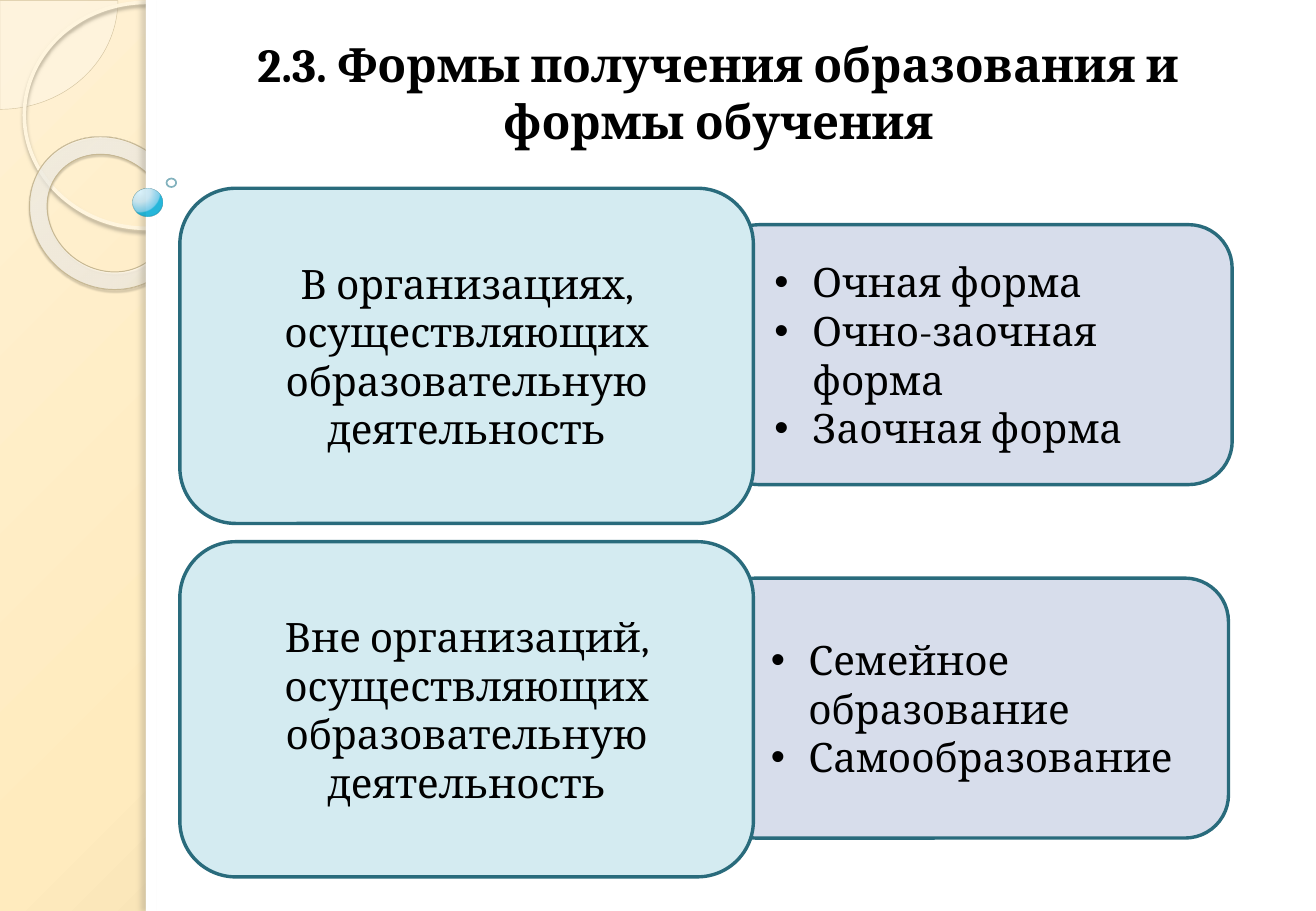
from lxml import etree
from pptx import Presentation
from pptx.dml.color import RGBColor
from pptx.enum.shapes import MSO_SHAPE as Shape
from pptx.enum.text import MSO_ANCHOR as Anchor, PP_ALIGN as Align
from pptx.oxml import parse_xml
from pptx.oxml.ns import nsdecls, qn
from pptx.util import Inches, Pt

COLORS = {
    "text": "000000", "white": "FFFFFF", "outline": "296B7C",
    "setting": "D4EBF1", "forms": "D7DDEB",
    "pie": "FEFAF4", "pie_line": "D3C39F",
    "ring": "FFF5DE", "ring_shadow": "B0A68F",
    "donut_line": "C7B893", "donut_shadow": "5A5444", "panel_shadow": "736F63",
    "bead_line": "308EA5", "bubble_line": "318093",
}
SAND = ([(0, "FFF1D3", 100), (40, "FFEBBE", 100), (100, "C9B484", 100)], (-24, -20, 124, 120))
PEARL = ([(0, "FFFCF6", 70), (70, "FFFEFB", 55), (100, "F0D28E", 60)], (-408, -50, 508, 150))
WATER = ([(0, "DAF4FF", 95), (50, "C3E3F0", 90), (95, "6BC7E8", 88), (100, "00ABD5", 85)],
         (25, 12, 75, 88))
ROWS = [
    ("В организациях, осуществляющих образовательную деятельность", 5.89,
     ["Очная форма", "Очно-заочная форма", "Заочная форма"]),
    ("Вне организаций, осуществляющих образовательную деятельность", 5.86,
     ["Семейное образование", "Самообразование"]),
]
ROW_TOP, ROW_PITCH = 1.55, 2.91


class SlideBuilder:
    """Draws styled elements on the current slide."""

    font = "Cambria"

    def __init__(self, slide):
        self.slide = slide

    def color(self, name):
        return RGBColor.from_string(COLORS[name])

    def set_alpha(self, owner, alpha):
        for tint in owner.findall(qn("a:solidFill") + "/" + qn("a:srgbClr")):
            etree.SubElement(tint, qn("a:alpha"), val=str(alpha * 1000))

    def set_gradient(self, solid, gradient):
        stops, focus = gradient
        stops_xml = "".join(
            f'<a:gs pos="{pos * 1000}"><a:srgbClr val="{tint}">'
            f'<a:alpha val="{alpha * 1000}"/></a:srgbClr></a:gs>'
            for pos, tint, alpha in stops)
        sides = " ".join(f'{side}="{value * 1000}"' for side, value in zip("ltrb", focus))
        solid.getparent().replace(solid, parse_xml(
            f'<a:gradFill {nsdecls("a")} rotWithShape="1"><a:gsLst>{stops_xml}</a:gsLst>'
            f'<a:path path="circle"><a:fillToRect {sides}/></a:path></a:gradFill>'))

    def background(self, gradient):
        self.slide.background.fill.solid()
        self.slide.background.fill.fore_color.rgb = self.color("white")
        self.set_gradient(self.slide.element.xpath(".//p:bgPr/a:solidFill")[0], gradient)

    def shape(self, kind, box, fill=None, alpha=None, gradient=None, line=None,
              width=1, line_alpha=None, shadow=None, adjust=(), rotation=0):
        item = self.slide.shapes.add_shape(kind, *map(Inches, box))
        item.shadow.inherit = False
        item.rotation = rotation
        for index, value in enumerate(adjust):
            item.adjustments[index] = value
        props = item.element.spPr
        if fill or gradient:
            item.fill.solid()
            item.fill.fore_color.rgb = self.color(fill or "white")
        else:
            item.fill.background()
        if alpha:
            self.set_alpha(props, alpha)
        if gradient:
            self.set_gradient(props.find(qn("a:solidFill")), gradient)
        if line:
            item.line.color.rgb = self.color(line)
            item.line.width = Pt(width)
            if line_alpha:
                self.set_alpha(props.find(qn("a:ln")), line_alpha)
        else:
            item.line.fill.background()
        if shadow:
            self.add_shadow(props, *shadow)
        return item

    def add_shadow(self, props, tint, alpha, blur, distance, angle):
        props.find(qn("a:effectLst")).append(parse_xml(
            f'<a:outerShdw {nsdecls("a")} blurRad="{Pt(blur)}" dist="{Pt(distance)}" '
            f'dir="{angle * 60000}" algn="ctr" rotWithShape="0"><a:srgbClr val="{COLORS[tint]}">'
            f'<a:alpha val="{alpha * 1000}"/></a:srgbClr></a:outerShdw>'))

    def add_lines(self, frame, lines, size, bold=False, bullets=False):
        frame.word_wrap = True
        for index, line in enumerate(lines):
            paragraph = frame.paragraphs[0] if index == 0 else frame.add_paragraph()
            paragraph.alignment = Align.LEFT if bullets else Align.CENTER
            if bullets:
                self.add_bullet(paragraph)
            run = paragraph.add_run()
            run.text = line
            run.font.name = self.font
            run.font.size = Pt(size)
            run.font.bold = bold
            run.font.color.rgb = self.color("text")

    def add_bullet(self, paragraph):
        props = paragraph._p.get_or_add_pPr()
        props.set("marL", str(Inches(0.59)))
        props.set("indent", str(Inches(-0.31)))
        etree.SubElement(props, qn("a:buFont"), typeface="Arial")
        etree.SubElement(props, qn("a:buChar"), char="•")

    def title(self, box, text):
        frame = self.slide.shapes.add_textbox(*map(Inches, box)).text_frame
        frame.margin_top = 0
        self.add_lines(frame, [text], 28, bold=True)

    def card(self, box, fill, lines, bullets=False):
        card = self.shape(Shape.ROUNDED_RECTANGLE, box, fill, line="outline", width=2)
        card.text_frame.vertical_anchor = Anchor.MIDDLE
        self.add_lines(card.text_frame, lines, 24, bullets=bullets)


def decorate(builder):
    builder.background(SAND)
    builder.shape(Shape.PIE, (-0.97, -0.89, 1.94, 1.79), "pie", alpha=33,
                  line="pie_line", width=0.25, adjust=(0, 54.02))
    builder.shape(Shape.OVAL, (0.2, 0.02, 2.02, 1.86), line="ring", width=2.15,
                  shadow=("ring_shadow", 85, 2, 2, 90))
    builder.shape(Shape.DONUT, (0.22, 1.15, 1.33, 1.21), gradient=PEARL, line="donut_line",
                  width=0.58, shadow=("donut_shadow", 35, 1, 1.2, 75),
                  adjust=(0.12,), rotation=38.6)
    builder.shape(Shape.RECTANGLE, (1.2, 0, 9.63, 7.5), "white")
    builder.shape(Shape.RECTANGLE, (1.2, 0, 0.09, 7.5), "white",
                  shadow=("panel_shadow", 25, 3, 3, 180))
    builder.shape(Shape.OVAL, (1.09, 1.55, 0.25, 0.23), gradient=WATER,
                  line="bead_line", width=0.16, line_alpha=60)
    builder.shape(Shape.OVAL, (1.37, 1.47, 0.08, 0.07), line="bubble_line", line_alpha=60)


def main():
    deck = Presentation()
    deck.slide_width, deck.slide_height = Inches(10.83), Inches(7.5)
    builder = SlideBuilder(deck.slides.add_slide(deck.slide_layouts[6]))
    decorate(builder)
    builder.title((1.28, 0.29, 9.26, 1.1), "2.3. Формы получения образования и формы обучения")
    for index, (setting, forms_left, forms) in enumerate(ROWS):
        top = ROW_TOP + index * ROW_PITCH
        builder.card((forms_left, top + 0.3, 4.25, 2.14), "forms", forms, bullets=True)
        builder.card((1.48, top, 4.72, 2.76), "setting", [setting])
    deck.save("out.pptx")


if __name__ == "__main__":
    main()
